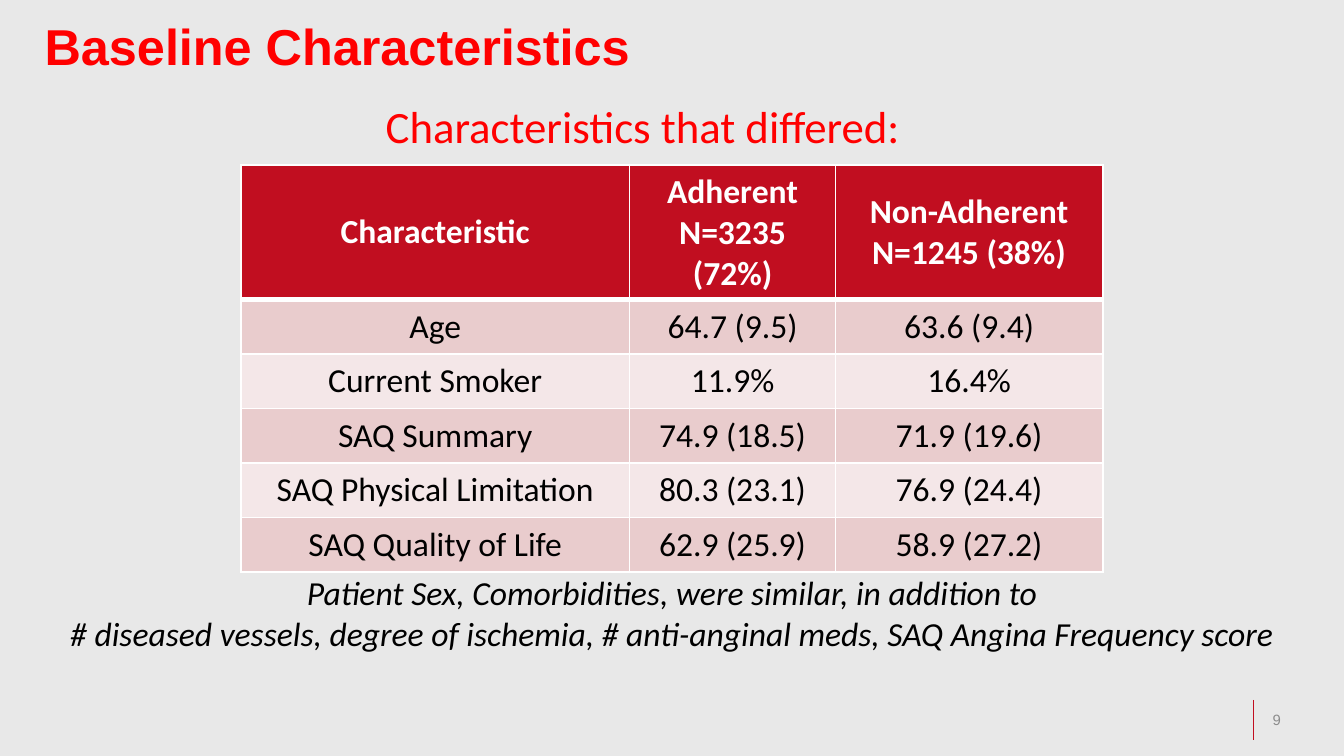
import pptx
import pptx.dml.color
import pptx.enum.shapes
import pptx.enum.text
import pptx.oxml.ns
import pptx.util
from lxml import etree

Cm, Pt = pptx.util.Cm, pptx.util.Pt
RGB = pptx.dml.color.RGBColor.from_string
ALIGN = pptx.enum.text.PP_ALIGN
ANCHOR = pptx.enum.text.MSO_ANCHOR
qn = pptx.oxml.ns.qn

# Content
TITLE = ["Baseline Characteristics"]
SUBTITLE = ["Characteristics that differed:"]
HEADER = ["Characteristic", "Adherent\nN=3235 (72%)", "Non-Adherent\nN=1245 (38%)"]
ROWS = [
    ["Age", "64.7 (9.5)", "63.6 (9.4)"],
    ["Current Smoker", "11.9%", "16.4%"],
    ["SAQ Summary", "74.9 (18.5)", "71.9 (19.6)"],
    ["SAQ Physical Limitation", "80.3 (23.1)", "76.9 (24.4)"],
    ["SAQ Quality of Life", "62.9 (25.9)", "58.9 (27.2)"],
]
NOTE = [
    "Patient Sex, Comorbidities, were similar, in addition to",
    "# diseased vessels, degree of ischemia, # anti-anginal meds, SAQ Angina Frequency score",
]
PAGE = ["9"]


# Theme: colours and text styles (font, size, colour, bold, italic)
class Theme:
    background = "E8E8E8"
    accent = "C10E20"
    border = "FFFFFF"
    bands = ("E9CCCD", "F4E7E8")
    title = ("Arial", 27, "FF0000", True, False)
    subtitle = ("Calibri", 24, "FF0000", False, False)
    header = ("Calibri", 18, "FFFFFF", True, False)
    body = ("Calibri", 18, "000000", False, False)
    note = ("Calibri", 18, "000000", False, True)
    page = ("Arial", 8, "8C8C8C", False, False)


# Layout in centimetres
TITLE_BOX = (0.38, 0.25, 11.99, 1.6)
SUBTITLE_BOX = (7.04, 1.75, 10.64, 1.27)
NOTE_BOX = (1.02, 10.69, 23.37, 1.8)
PAGE_BOX = (23.8, 13.23, 1.6, 0.76)
RULE_X = 23.68
TABLE_LEFT, TABLE_TOP = 4.55, 3.12
COL_WIDTHS = (7.35, 3.89, 5.05)
HEADER_HEIGHT, ROW_HEIGHT = 1.93, 1.03


def write(tf, lines, style, align=ALIGN.LEFT, anchor=ANCHOR.TOP):
    font, size, color, bold, italic = style
    tf.word_wrap = True
    tf.vertical_anchor = anchor
    for i, line in enumerate(lines):
        p = tf.paragraphs[0] if i == 0 else tf.add_paragraph()
        p.alignment = align
        r = p.add_run()
        r.text = line
        r.font.name, r.font.size = font, Pt(size)
        r.font.bold, r.font.italic = bold, italic
        r.font.color.rgb = RGB(color)


def add_text(s, box, lines, style, **options):
    sp = s.shapes.add_textbox(*map(Cm, box))
    write(sp.text_frame, lines, style, **options)


def set_borders(cell, widths):
    tc_pr = cell._tc.get_or_add_tcPr()
    for side, width in widths.items():
        ln = etree.SubElement(tc_pr, qn("a:ln" + side), w=str(Pt(width)))
        fill = etree.SubElement(ln, qn("a:solidFill"))
        etree.SubElement(fill, qn("a:srgbClr"), val=Theme.border)


def add_table(s):
    data = [HEADER] + ROWS
    heights = [HEADER_HEIGHT] + [ROW_HEIGHT] * len(ROWS)
    table = s.shapes.add_table(
        len(data), len(HEADER), Cm(TABLE_LEFT), Cm(TABLE_TOP),
        Cm(sum(COL_WIDTHS)), Cm(sum(heights))).table
    for col, width in zip(table.columns, COL_WIDTHS):
        col.width = Cm(width)
    for i, (values, height) in enumerate(zip(data, heights)):
        table.rows[i].height = Cm(height)
        style = Theme.body if i else Theme.header
        color = Theme.bands[(i - 1) % 2] if i else Theme.accent
        # A thick line parts the header from the body
        widths = {"L": 1, "R": 1, "T": 3 if i == 1 else 1, "B": 1 if i else 3}
        for j, value in enumerate(values):
            cell = table.cell(i, j)
            write(cell.text_frame, value.split("\n"), style, ALIGN.CENTER)
            cell.vertical_anchor = ANCHOR.MIDDLE
            set_borders(cell, widths)
            cell.fill.solid()
            cell.fill.fore_color.rgb = RGB(color)


def main():
    prs = pptx.Presentation()
    prs.slide_width, prs.slide_height = Cm(25.4), Cm(14.29)
    s = prs.slides.add_slide(prs.slide_layouts[5])
    s.background.fill.solid()
    s.background.fill.fore_color.rgb = RGB(Theme.background)

    # Title
    sp = s.shapes.title
    sp.left, sp.top, sp.width, sp.height = map(Cm, TITLE_BOX)
    sp.text_frame.auto_size = pptx.enum.text.MSO_AUTO_SIZE.NONE
    write(sp.text_frame, TITLE, Theme.title, ALIGN.CENTER)
    sp.text_frame.paragraphs[0].line_spacing = Pt(30)

    # Page number with its rule
    top, height = PAGE_BOX[1], PAGE_BOX[3]
    rule = s.shapes.add_connector(
        pptx.enum.shapes.MSO_CONNECTOR.STRAIGHT,
        Cm(RULE_X), Cm(top), Cm(RULE_X), Cm(top + height))
    rule.line.color.rgb = RGB(Theme.accent)
    rule.line.width = Pt(0.5)
    etree.SubElement(rule._element.spPr, qn("a:effectLst"))
    add_text(s, PAGE_BOX, PAGE, Theme.page, anchor=ANCHOR.MIDDLE)

    # Table with its heading and note
    add_table(s)
    add_text(s, SUBTITLE_BOX, SUBTITLE, Theme.subtitle)
    add_text(s, NOTE_BOX, NOTE, Theme.note, align=ALIGN.CENTER)

    prs.save("out.pptx")


if __name__ == "__main__":
    main()
